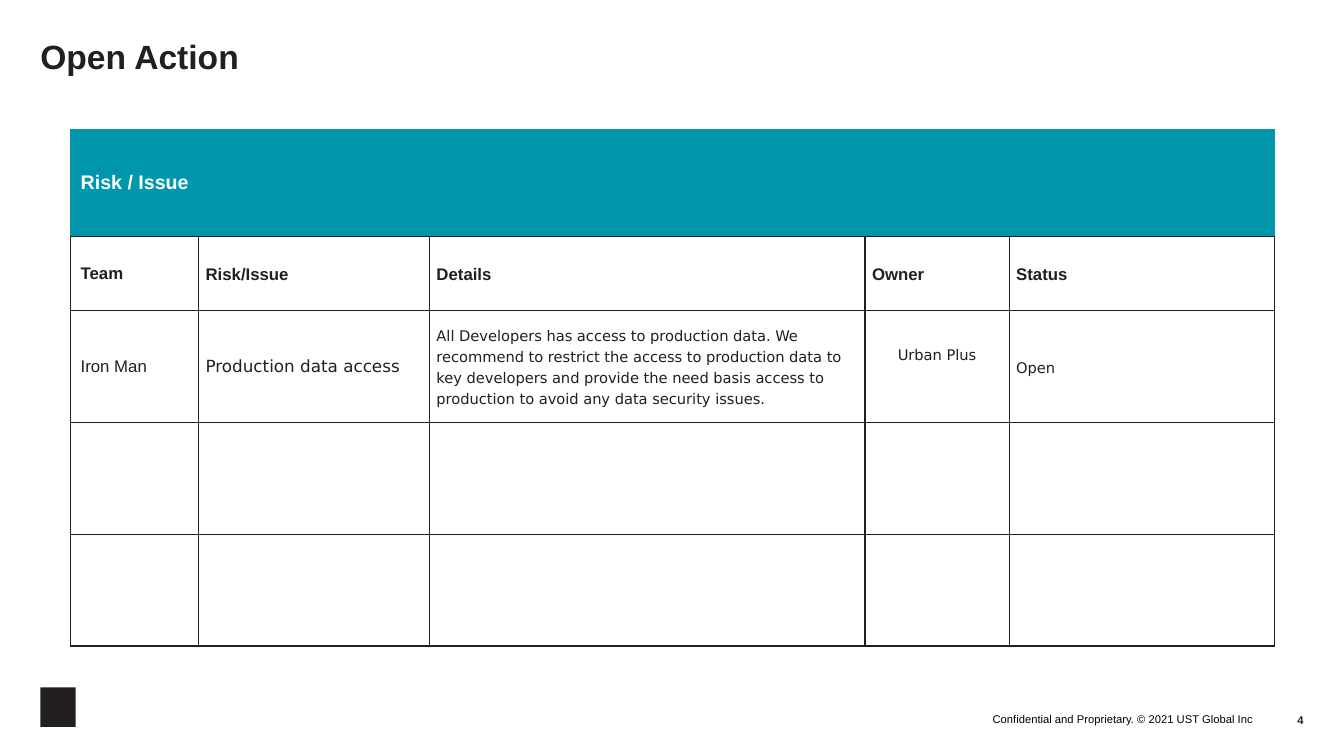
"""Build the open action slide with its risk and issue table."""
from dataclasses import dataclass

from lxml.etree import SubElement
from pptx import Presentation
from pptx.dml.color import RGBColor
from pptx.enum.shapes import MSO_SHAPE as Shape
from pptx.enum.text import MSO_ANCHOR as Anchor, PP_ALIGN as Align
from pptx.oxml.ns import qn
from pptx.util import Pt

PX = 9144
TITLE_ONLY = 5


@dataclass(frozen=True)
class Theme:
    """Colours, fonts and type sizes of the slide."""
    ink: str = "231F20"
    teal: str = "0097AC"
    white: str = "FFFFFF"
    black: str = "000000"
    sans: str = "Arial"
    body: str = "DejaVu Sans"
    title_size: float = 24
    band_size: float = 14
    cell_size: float = 12
    detail_size: float = 10.5
    footer_size: float = 8
    leading: float = 15


THEME = Theme()
COLUMNS = (127, 229, 432, 143, 263)
ROWS = (106, 73, 111, 111, 111)
HEADINGS = ("Team", "Risk/Issue", "Details", "Owner", "Status")
ISSUE = (
    "Iron Man",
    "Production data access",
    "All Developers has access to production data. We recommend to restrict "
    "the access to production data to key developers and provide the need "
    "basis access to production to avoid any data security issues.",
    "Urban Plus",
    "Open",
)


def px(*lengths):
    """Turn pixel lengths into EMU."""
    return [length * PX for length in lengths]


def apply(target, values):
    """Set each attribute named in a dict of format values."""
    for name, value in values.items():
        setattr(target, name, value)


def write(frame, text, size, color=THEME.ink, font=THEME.sans, bold=False, **paragraph_format):
    """Write one formatted paragraph into a text frame."""
    paragraph = frame.paragraphs[0]
    apply(paragraph, paragraph_format)
    run = paragraph.add_run()
    run.text = text
    apply(run.font, {"name": font, "size": Pt(size), "bold": bold})
    run.font.color.rgb = RGBColor.from_string(color)


def set_margins(target, left, top, right, bottom):
    """Set the four inner margins of a frame or cell."""
    sides = ("left", "top", "right", "bottom")
    apply(target, {f"margin_{side}": inset
                   for side, inset in zip(sides, px(left, top, right, bottom))})


def set_borders(cell, colors):
    """Draw one-point cell borders in the colours given by side."""
    properties = cell._tc.get_or_add_tcPr()
    for side in "LRTB":
        line = SubElement(properties, qn(f"a:ln{side}"), w=str(Pt(1)))
        fill = SubElement(line, qn("a:solidFill"))
        SubElement(fill, qn("a:srgbClr"), val=colors.get(side, THEME.ink))


def add_title(slide, box, text):
    """Place and format the title placeholder."""
    title = slide.shapes.title
    apply(title, dict(zip(("left", "top", "width", "height"), px(*box))))
    frame = title.text_frame
    set_margins(frame, 0, 0, 0, 0)
    apply(frame, {"vertical_anchor": Anchor.TOP, "word_wrap": True})
    write(frame, text, THEME.title_size, bold=True,
          alignment=Align.LEFT, line_spacing=0.9)


def fill_issue_cells(table):
    """Write the column headings and the one open issue."""
    sizes = (THEME.cell_size,) * 2 + (THEME.detail_size,) * 3
    for column, (heading, entry, size) in enumerate(zip(HEADINGS, ISSUE, sizes)):
        is_team, is_owner = heading == "Team", heading == "Owner"
        leading = {} if is_team else {"line_spacing": Pt(THEME.leading)}
        entry_format = {"alignment": Align.CENTER} if is_owner else leading
        margins = (10, 5, 10, 5) if is_team else (7, 0, 7, 0)
        heading_cell, entry_cell = table.cell(1, column), table.cell(2, column)
        for cell in (heading_cell, entry_cell):
            set_margins(cell, *margins)
        if is_owner:
            entry_cell.margin_bottom = 21 * PX
        write(heading_cell.text_frame, heading, THEME.cell_size, bold=True, **leading)
        write(entry_cell.text_frame, entry, size,
              font=THEME.sans if is_team else THEME.body, **entry_format)


def add_issue_table(slide, box):
    """Place the risk and issue table with its teal band."""
    table = slide.shapes.add_table(len(ROWS), len(COLUMNS), *px(*box)).table
    for column, width in zip(table.columns, px(*COLUMNS)):
        column.width = width
    for row, height in zip(table.rows, px(*ROWS)):
        row.height = height
    for index, row in enumerate(table.rows):
        for cell in row.cells:
            cell.vertical_anchor = Anchor.MIDDLE
            set_borders(cell, dict.fromkeys("LRT", THEME.teal) if index == 0 else {})
            cell.fill.solid()
            cell.fill.fore_color.rgb = RGBColor.from_string(
                THEME.teal if index == 0 else THEME.white)
    band = table.cell(0, 0)
    band.merge(table.cell(0, 3))
    set_margins(band, 10, 5, 10, 5)
    write(band.text_frame, "Risk / Issue", THEME.band_size, THEME.white,
          bold=True, line_spacing=Pt(THEME.leading))
    fill_issue_cells(table)


def add_footer(slide, box):
    """Place the mark, the copyright line and the page number."""
    left, top, width, height = box
    mark = slide.shapes.add_shape(Shape.RECTANGLE, *px(left, top, 35, height))
    mark.shadow.inherit = False
    mark.fill.solid()
    mark.fill.fore_color.rgb = RGBColor.from_string(THEME.ink)
    mark.line.fill.background()
    right = left + width
    notes = (
        ("Confidential and Proprietary. © 2021 UST Global Inc",
         (right - 394, top + 18, 344, 20), THEME.black, False),
        ("4", (right - 50, top + 9, 50, 30), THEME.ink, True),
    )
    for text, place, color, bold in notes:
        frame = slide.shapes.add_textbox(*px(*place)).text_frame
        set_margins(frame, 0, 0, 0, 0)
        apply(frame, {"vertical_anchor": Anchor.BOTTOM, "word_wrap": True})
        write(frame, text, THEME.footer_size, color, bold=bold, alignment=Align.RIGHT)


def main():
    """Build and save the slide."""
    deck = Presentation()
    deck.slide_width, deck.slide_height = px(1333, 750)
    slide = deck.slides.add_slide(deck.slide_layouts[TITLE_ONLY])
    add_title(slide, (40, 40, 1253, 100), "Open Action")
    add_issue_table(slide, (70, 129, sum(COLUMNS), sum(ROWS)))
    add_footer(slide, (40, 682, 1253, 39))
    deck.save("out.pptx")


if __name__ == "__main__":
    main()
